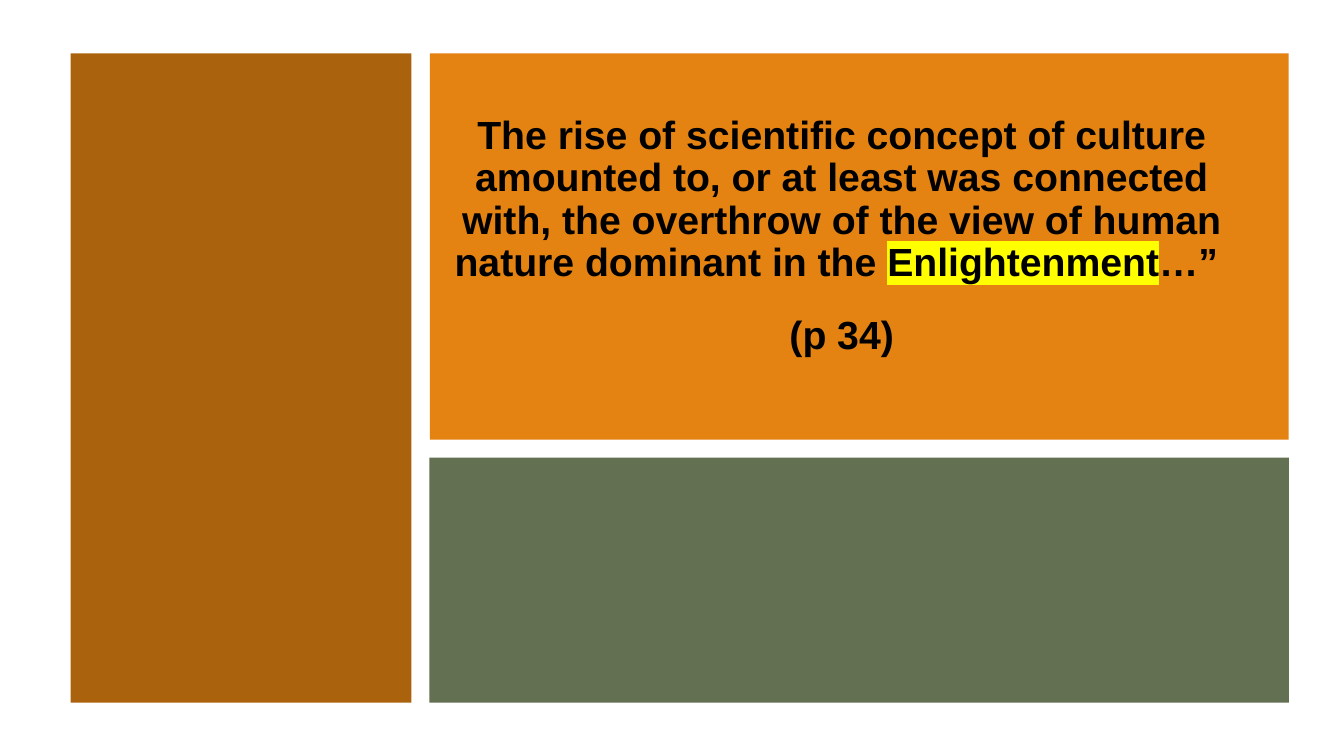
from lxml import etree
from pptx import Presentation
from pptx.dml.color import RGBColor
from pptx.enum.shapes import MSO_SHAPE
from pptx.enum.text import MSO_ANCHOR, PP_ALIGN
from pptx.oxml.ns import qn
from pptx.util import Pt

COLORS = {
    "white": "FFFFFF",
    "orange": "E48312",
    "green": "637052",
    "brown": "AB620D",
    "black": "000000",
    "yellow": "FFFF00",
}

deck = Presentation()
deck.slide_width, deck.slide_height = Pt(960), Pt(540)
page = deck.slides.add_slide(deck.slide_layouts[1])
page.background.fill.solid()
page.background.fill.fore_color.rgb = RGBColor.from_string(COLORS["green"])
title = page.shapes.title
title.element.getparent().remove(title.element)

# Colour panels: left, top, width, height
panels = [
    ("white", 0, 0, 960, 540),
    ("orange", 307, 38.2, 613.5, 275.8),
    ("green", 306.7, 326.9, 614, 175),
    ("brown", 50.4, 38.2, 243.4, 463.7),
]
for color, *bounds in panels:
    panel = page.shapes.add_shape(MSO_SHAPE.RECTANGLE, *map(Pt, bounds))
    panel.shadow.inherit = False
    panel.fill.solid()
    panel.fill.fore_color.rgb = RGBColor.from_string(COLORS[color])
    panel.line.fill.background()

# Quotation, placed in front of the panels
quote = page.placeholders[1]
quote_format = {"left": 306.7, "top": 49, "width": 589, "height": 240.5}
for name, value in quote_format.items():
    setattr(quote, name, Pt(value))
page.shapes._spTree.append(quote.element)

frame = quote.text_frame
frame.word_wrap = True
frame.vertical_anchor = MSO_ANCHOR.MIDDLE
for side in ("left", "top", "right", "bottom"):
    setattr(frame, f"margin_{side}", Pt(3.6))

paragraphs = [
    [
        ("The rise of scientific concept of culture amounted to, or at least was "
         "connected with, the overthrow of the view of human nature dominant in the ", None),
        ("Enlightenment", "yellow"),
        ("…” ", None),
    ],
    [("(p 34)", None)],
]
para_format = {"alignment": PP_ALIGN.CENTER, "line_spacing": 0.9, "space_after": Pt(10)}
font_format = {"name": "Arial", "size": Pt(28), "bold": True}

for index, spans in enumerate(paragraphs):
    para = frame.add_paragraph() if index else frame.paragraphs[0]
    for name, value in para_format.items():
        setattr(para, name, value)
    para.space_before = Pt(12 if index else 0)
    properties = para._p.get_or_add_pPr()
    properties.set("marL", "0")
    properties.set("indent", "0")
    etree.SubElement(properties, qn("a:buNone"))
    for text, highlight in spans:
        span = para.add_run()
        span.text = text
        span.font.color.rgb = RGBColor.from_string(COLORS["black"])
        for name, value in font_format.items():
            setattr(span.font, name, value)
        if highlight:
            marker = etree.Element(qn("a:highlight"))
            etree.SubElement(marker, qn("a:srgbClr"), val=COLORS[highlight])
            span.font._element.find(qn("a:solidFill")).addnext(marker)

deck.save("out.pptx")
